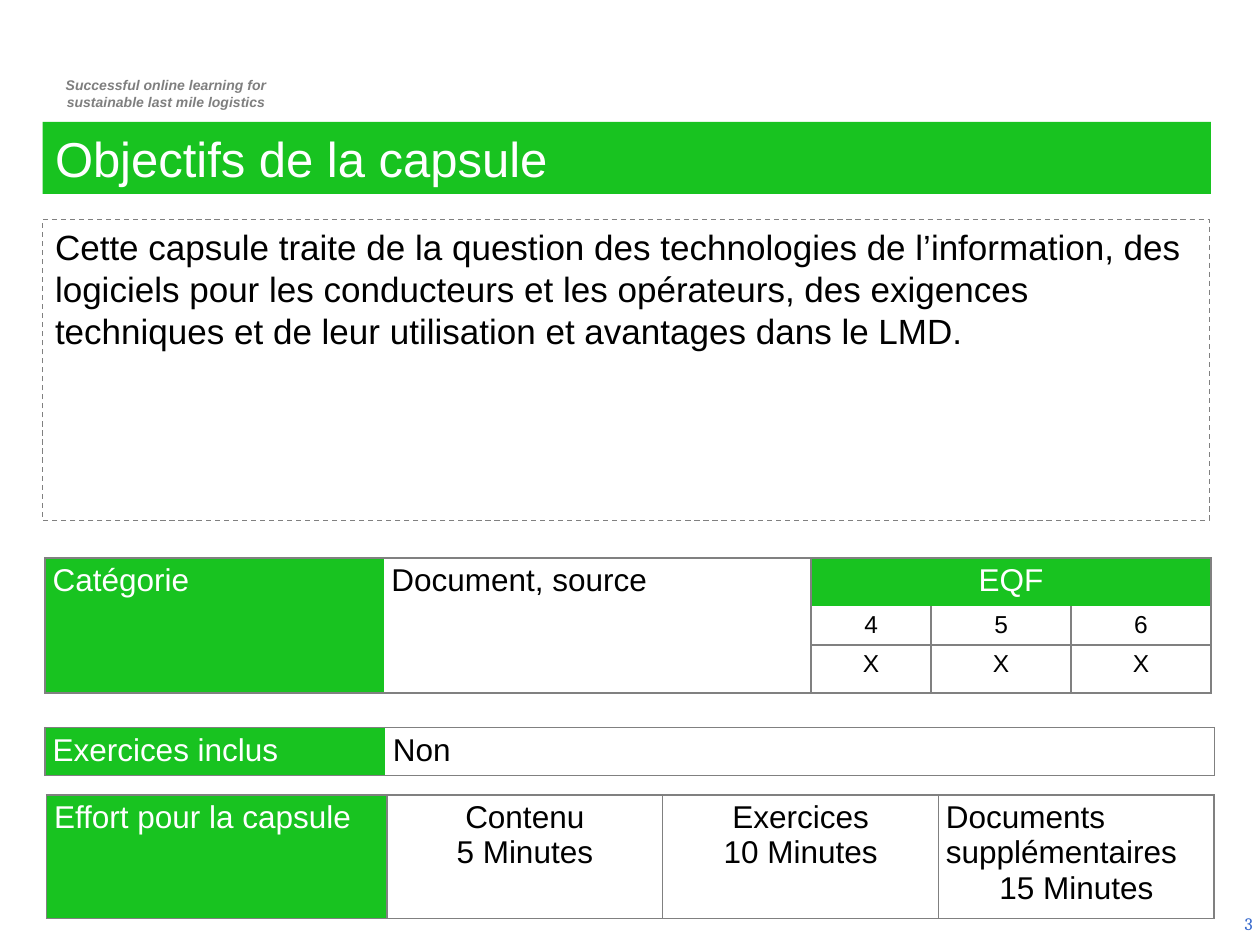
"""Build the slide presenting the goals, category and effort of a learning capsule."""
import dataclasses

import lxml.etree
import pptx
import pptx.dml.color
import pptx.enum.dml
import pptx.enum.shapes
import pptx.enum.text
import pptx.oxml.ns
import pptx.util

Cm = pptx.util.Cm
Pt = pptx.util.Pt
ANCHOR = pptx.enum.text.MSO_ANCHOR
ALIGN = {
    "left": pptx.enum.text.PP_ALIGN.LEFT,
    "center": pptx.enum.text.PP_ALIGN.CENTER,
    "right": pptx.enum.text.PP_ALIGN.RIGHT,
}


@dataclasses.dataclass(frozen=True)
class Theme:
    font: str = "Arial"
    number_font: str = "Cambria"
    green: str = "18C320"
    white: str = "FFFFFF"
    black: str = "000000"
    border: str = "808080"
    muted: str = "7F7F7F"
    blue: str = "3366CC"
    tagline_size: int = 8
    number_size: int = 10
    level_size: int = 14
    cell_size: int = 18
    body_size: int = 20
    title_size: int = 28


THEME = Theme()

TAGLINE = ["Successful online learning for", "sustainable last mile logistics"]
TITLE = "Objectifs de la capsule"
BODY = (
    "Cette capsule traite de la question des technologies de l’information, "
    "des logiciels pour les conducteurs et les opérateurs, des exigences "
    "techniques et de leur utilisation et avantages dans le LMD."
)
PAGE_NUMBER = "3"
EQF_LEVELS = [("4", "X"), ("5", "X"), ("6", "X")]
EFFORTS = [
    ("Contenu", "5 Minutes", "center"),
    ("Exercices", "10 Minutes", "center"),
    ("Documents supplémentaires", "15 Minutes", "left"),
]


@dataclasses.dataclass(frozen=True)
class Entry:
    row: int
    column: int
    lines: list
    aligns: tuple = ("left",)
    size: int = THEME.cell_size
    header: bool = False
    rows: int = 1
    columns: int = 1
    open_sides: str = ""


CATEGORY = [
    Entry(0, 0, ["Catégorie"], header=True, rows=3, open_sides="R"),
    Entry(0, 1, ["Document, source"], rows=3, open_sides="L"),
    Entry(0, 2, ["EQF"], ("center",), header=True, columns=3, open_sides="B"),
] + [
    Entry(row, column, [text], ("center",), THEME.level_size, open_sides="T" if row == 1 else "")
    for column, level in enumerate(EQF_LEVELS, 2)
    for row, text in enumerate(level, 1)
]
EXERCISES = [
    Entry(0, 0, ["Exercices inclus"], header=True, open_sides="R"),
    Entry(0, 1, ["Non"], open_sides="L"),
]
EFFORT = [Entry(0, 0, ["Effort pour la capsule"], header=True)] + [
    Entry(0, column, [name, duration], (align, "center"))
    for column, (name, duration, align) in enumerate(EFFORTS, 1)
]

TABLES = [
    (0.91, 11.25, [6.83, 8.61, 2.42, 2.82, 2.82], [0.94, 0.79, 0.95], CATEGORY),
    (0.91, 14.67, [6.86, 16.71], [0.95], EXERCISES),
    (0.94, 16.03, [6.86, 5.56, 5.56, 5.56], [2.47], EFFORT),
]


def rgb(value):
    return pptx.dml.color.RGBColor.from_string(value)


def write(text_frame, lines, size, color, aligns=("left",), font=THEME.font, strong=False):
    text_frame.text = "\n".join(lines)
    text_frame.word_wrap = True
    for index, paragraph in enumerate(text_frame.paragraphs):
        paragraph.alignment = ALIGN[aligns[min(index, len(aligns) - 1)]]
        for run in paragraph.runs:
            run.font.name = font
            run.font.size = Pt(size)
            run.font.bold = run.font.italic = strong
            run.font.color.rgb = rgb(color)


def add_panel(slide, box, text, size, color, fill=None):
    shape = slide.shapes.add_shape(
        pptx.enum.shapes.MSO_SHAPE.RECTANGLE, *[Cm(length) for length in box]
    )
    shape.shadow.inherit = False
    if fill:
        shape.fill.solid()
        shape.fill.fore_color.rgb = rgb(fill)
        shape.line.fill.background()
    else:
        shape.fill.background()
        shape.line.color.rgb = rgb(THEME.border)
        shape.line.width = Pt(0.75)
        shape.line.dash_style = pptx.enum.dml.MSO_LINE.DASH
    shape.text_frame.vertical_anchor = ANCHOR.TOP
    write(shape.text_frame, [text], size, color)


def add_text(slide, box, lines, size, color, align, **style):
    shape = slide.shapes.add_textbox(*[Cm(length) for length in box])
    write(shape.text_frame, lines, size, color, (align,), **style)
    return shape


def set_borders(cell, open_sides):
    qn = pptx.oxml.ns.qn
    properties = cell._tc.get_or_add_tcPr()
    for side in "LRTB":
        line = lxml.etree.SubElement(properties, qn(f"a:ln{side}"), w=str(int(Pt(1))))
        if side in open_sides:
            lxml.etree.SubElement(line, qn("a:noFill"))
        else:
            fill = lxml.etree.SubElement(line, qn("a:solidFill"))
            lxml.etree.SubElement(fill, qn("a:srgbClr"), val=THEME.border)


def fill_entry(table, entry):
    for row in range(entry.row, entry.row + entry.rows):
        for column in range(entry.column, entry.column + entry.columns):
            cell = table.cell(row, column)
            set_borders(cell, entry.open_sides)
            cell.fill.solid()
            cell.fill.fore_color.rgb = rgb(THEME.green if entry.header else THEME.white)
    origin = table.cell(entry.row, entry.column)
    if entry.rows * entry.columns > 1:
        origin.merge(table.cell(row, column))
    origin.margin_left = origin.margin_right = Cm(0.15)
    origin.margin_top = origin.margin_bottom = Cm(0.1)
    color = THEME.white if entry.header else THEME.black
    write(origin.text_frame, entry.lines, entry.size, color, entry.aligns)


def add_grid(slide, left, top, widths, heights, entries):
    table = slide.shapes.add_table(
        len(heights), len(widths), Cm(left), Cm(top), Cm(sum(widths)), Cm(sum(heights))
    ).table
    table.first_row = table.horz_banding = False
    for column, width in zip(table.columns, widths):
        column.width = Cm(width)
    for row, height in zip(table.rows, heights):
        row.height = Cm(height)
    for entry in entries:
        fill_entry(table, entry)


def main():
    presentation = pptx.Presentation()
    presentation.slide_width, presentation.slide_height = Cm(25.4), Cm(19.05)
    slide = presentation.slides.add_slide(presentation.slide_layouts[6])
    add_text(slide, (0.77, 1.42, 5.16, 0.94), TAGLINE, THEME.tagline_size, THEME.muted,
             "center", strong=True)
    number = add_text(slide, (19.58, 18.11, 5.92, 1.02), [PAGE_NUMBER], THEME.number_size,
                      THEME.blue, "right", font=THEME.number_font)
    number.text_frame.vertical_anchor = ANCHOR.MIDDLE
    add_panel(slide, (0.86, 2.46, 23.55, 1.45), TITLE, THEME.title_size, THEME.white, THEME.green)
    add_panel(slide, (0.86, 4.42, 23.52, 6.07), BODY, THEME.body_size, THEME.black)
    for grid in TABLES:
        add_grid(slide, *grid)
    presentation.save("out.pptx")


if __name__ == "__main__":
    main()
